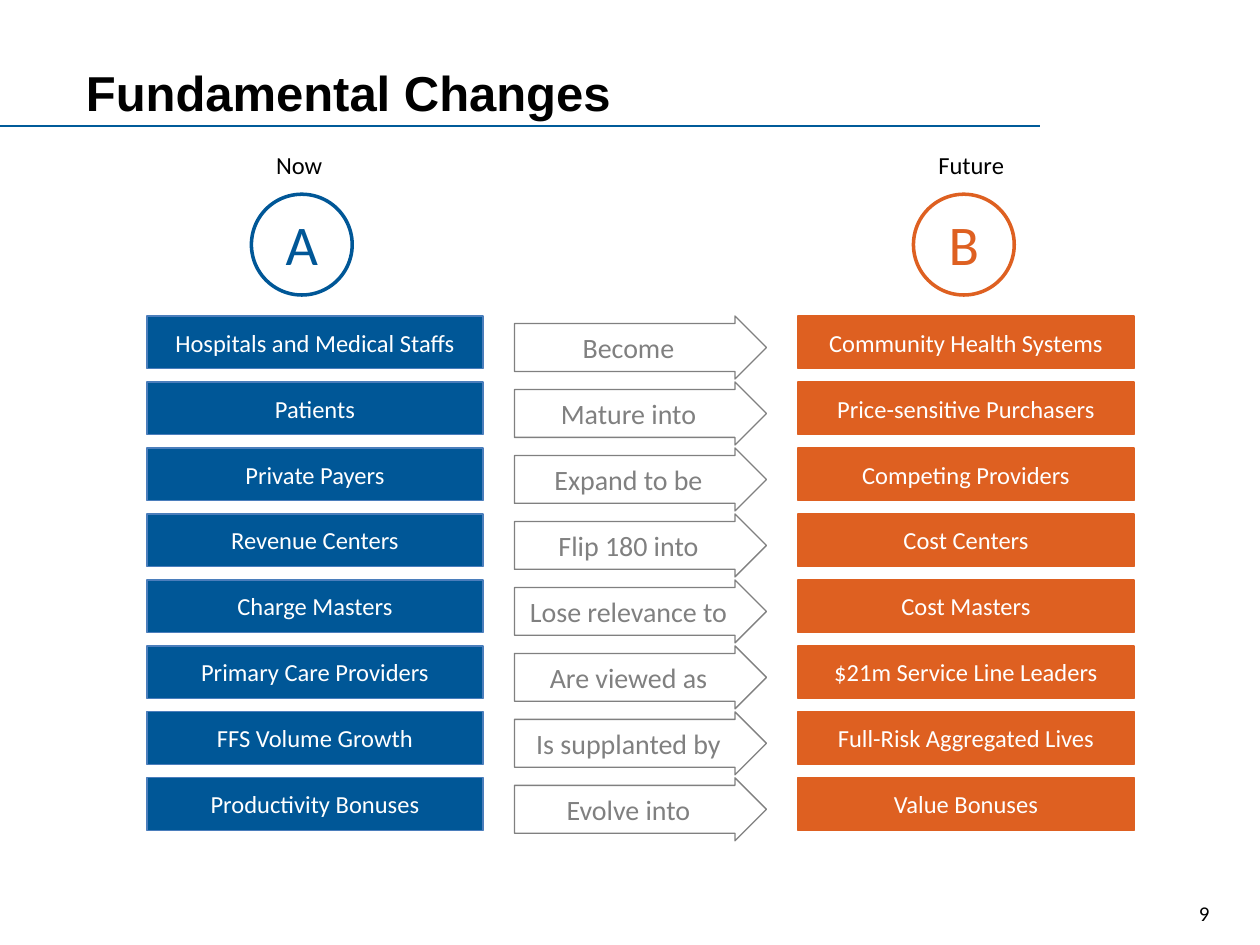
from lxml.etree import SubElement
from pptx import Presentation
from pptx.dml.color import RGBColor
from pptx.enum.shapes import MSO_CONNECTOR, MSO_SHAPE
from pptx.enum.text import MSO_ANCHOR, PP_ALIGN
from pptx.oxml.ns import qn
from pptx.util import Pt

BLACK = RGBColor(0x00, 0x00, 0x00)
WHITE = RGBColor(0xFF, 0xFF, 0xFF)
GRAY = RGBColor(0x80, 0x80, 0x80)
BLUE = RGBColor(0x00, 0x57, 0x97)
BLUE_EDGE = RGBColor(0x4B, 0x7E, 0xBC)
RULE_BLUE = RGBColor(0x00, 0x5B, 0x99)
ORANGE = RGBColor(0xDE, 0x60, 0x21)

ROWS = [
    ("Hospitals and Medical Staffs", "Become", "Community Health Systems"),
    ("Patients", "Mature into", "Price-sensitive Purchasers"),
    ("Private Payers", "Expand to be", "Competing Providers"),
    ("Revenue Centers", "Flip 180 into", "Cost Centers"),
    ("Charge Masters", "Lose relevance to", "Cost Masters"),
    ("Primary Care Providers", "Are viewed as", "$21m Service Line Leaders"),
    ("FFS Volume Growth", "Is supplanted by", "Full-Risk Aggregated Lives"),
    ("Productivity Bonuses", "Evolve into", "Value Bonuses"),
]


def write(s, text, size, color, font="Calibri", bold=False, align=PP_ALIGN.CENTER):
    tf = s.text_frame
    tf.word_wrap = True
    tf.text = text
    p = tf.paragraphs[0]
    p.alignment = align
    r = p.runs[0]
    r.font.name, r.font.size, r.font.bold = font, Pt(size), bold
    r.font.color.rgb = color
    return tf


def add_text(slide, x, y, w, h, text, size, **style):
    s = slide.shapes.add_textbox(Pt(x), Pt(y), Pt(w), Pt(h))
    return write(s, text, size, BLACK, **style)


def add_shape(shapes, kind, x, y, w, h, fill, edge, weight=0.75):
    s = shapes.add_shape(kind, Pt(x), Pt(y), Pt(w), Pt(h))
    s.shadow.inherit = False
    if fill is None:
        s.fill.background()
    else:
        s.fill.solid()
        s.fill.fore_color.rgb = fill
    s.line.color.rgb = edge
    s.line.width = Pt(weight)
    return s


def add_title(slide, x, y, w, h):
    tf = add_text(slide, x, y, w, h, "Fundamental Changes", 28,
                  font="Arial", bold=True, align=PP_ALIGN.LEFT)
    tf.margin_top = Pt(6)
    rule_y = Pt(y + h + 6.5)
    rule = slide.shapes.add_connector(MSO_CONNECTOR.STRAIGHT, 0, rule_y, Pt(594), rule_y)
    rule.line.color.rgb = RULE_BLUE
    rule.line.width = Pt(0.75)
    SubElement(rule._element.spPr, qn("a:effectLst"))


def add_heading(slide, x, y, w, label, letter, color):
    tf = add_text(slide, x, y, w, 24, label, 14)
    tf.paragraphs[0].line_spacing = 0.9
    size = 57.6
    s = add_shape(slide.shapes, MSO_SHAPE.OVAL, x + w / 2 - size / 2 + 1.5, y + 27,
                  size, size, WHITE, color, 2)
    tf = write(s, letter, 32, color)
    tf.vertical_anchor = MSO_ANCHOR.BOTTOM
    tf.margin_left = tf.margin_right = tf.margin_top = 0
    tf.margin_bottom = Pt(1.8)


def add_row(slide, x, y, w, now, change, future):
    box_w, box_h, arrow_w, arrow_h = 192, 30, 144, 36
    shapes = slide.shapes.add_group_shape().shapes
    boxes = [(x, now, BLUE, BLUE_EDGE), (x + w - box_w, future, ORANGE, ORANGE)]
    for left, text, fill, edge in boxes:
        s = add_shape(shapes, MSO_SHAPE.RECTANGLE, left, y, box_w, box_h, fill, edge)
        write(s, text, 14, WHITE).vertical_anchor = MSO_ANCHOR.MIDDLE
    s = add_shape(shapes, MSO_SHAPE.RIGHT_ARROW, x + (w - arrow_w) / 2, y,
                  arrow_w, arrow_h, None, GRAY)
    s.adjustments[0], s.adjustments[1] = 0.76, 0.5
    write(s, change, 16, GRAY).vertical_anchor = MSO_ANCHOR.MIDDLE


def add_rows(slide, x, y, w, pitch):
    for i, row in enumerate(ROWS):
        add_row(slide, x, y + i * pitch, w, *row)


def main():
    prs = Presentation()
    prs.slide_width, prs.slide_height = Pt(720), Pt(540)
    slide = prs.slides.add_slide(prs.slide_layouts[6])
    add_title(slide, 42, 29.5, 522, 36)
    add_heading(slide, 120, 84, 102, "Now", "A", BLUE)
    add_heading(slide, 504, 84, 102, "Future", "B", ORANGE)
    slide.shapes[-1].left = Pt(522)
    add_rows(slide, 84, 180.6, 564, 37.7)
    add_text(slide, 678, 511, 42, 29, "9", 12, align=PP_ALIGN.LEFT)
    prs.save("out.pptx")


if __name__ == "__main__":
    main()
